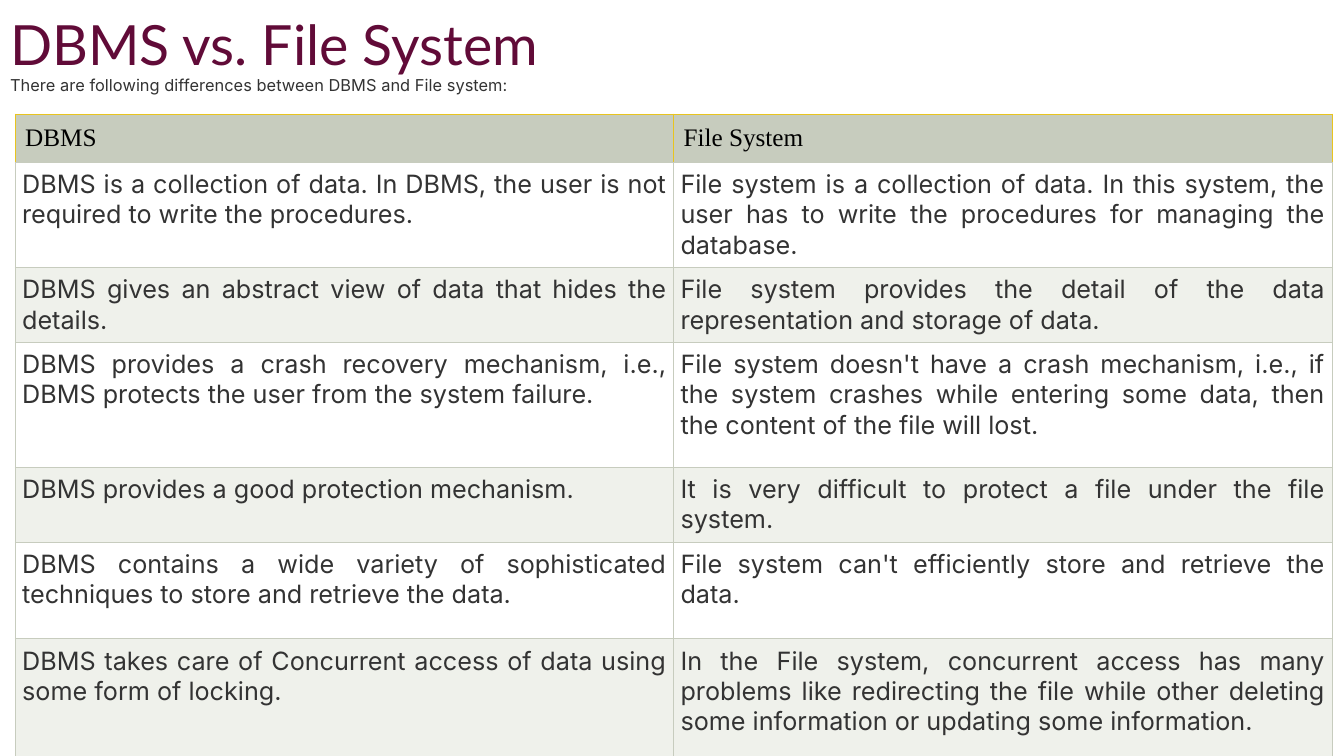
import pptx
import pptx.util
import pptx.dml.color
import pptx.enum.text
from dataclasses import dataclass
from lxml import etree
from pptx.util import Inches

ALIGN = pptx.enum.text.PP_ALIGN


@dataclass(frozen=True)
class Theme:
    plum: str = "610B38"
    ink: str = "333333"
    black: str = "000000"
    white: str = "FFFFFF"
    pale: str = "EFF1EB"
    sage: str = "C7CCBE"
    gold: str = "E8C41F"
    head: str = "Lato"
    body: str = "Inter"
    serif: str = "Times New Roman"
    big: float = 39.6
    small: float = 11.7
    cell: float = 18
    line: float = 0.6


THEME = Theme()

ROWS = [
    (0.47, "DBMS", "File System"),
    (0.96, "DBMS is a collection of data. In DBMS, the user is not required to write the procedures.",
     "File system is a collection of data. In this system, the user has to write the procedures for managing the database."),
    (0.69, "DBMS gives an abstract view of data that hides the details.",
     "File system provides the detail of the data representation and storage of data."),
    (1.24, "DBMS provides a crash recovery mechanism, i.e., DBMS protects the user from the system failure.",
     "File system doesn't have a crash mechanism, i.e., if the system crashes while entering some data, then the content of the file will lost."),
    (0.68, "DBMS provides a good protection mechanism.",
     "It is very difficult to protect a file under the file system."),
    (0.96, "DBMS contains a wide variety of sophisticated techniques to store and retrieve the data.",
     "File system can't efficiently store and retrieve the data."),
    (1.24, "DBMS takes care of Concurrent access of data using some form of locking.",
     "In the File system, concurrent access has many problems like redirecting the file while other deleting some information or updating some information."),
]


def rgb(color):
    return pptx.dml.color.RGBColor.from_string(color)


def style(para, font, size, color, align):
    para.alignment = align
    for run in para.runs:
        run.font.name = font
        run.font.size = pptx.util.Pt(size)
        run.font.color.rgb = rgb(color)
        run.font.bold = False


def add_title(slide):
    title = slide.shapes.title
    title.left, title.top = Inches(0), Inches(0.02)
    title.width, title.height = Inches(13.33), Inches(1.11)
    frame = title.text_frame
    frame.auto_size = pptx.enum.text.MSO_AUTO_SIZE.NONE
    frame.vertical_anchor = pptx.enum.text.MSO_ANCHOR.MIDDLE
    frame.margin_bottom = Inches(0.09)
    frame.text = ("DBMS vs. File System\n"
                  "There are following differences between DBMS and File system:")
    fonts = [(THEME.head, THEME.big, THEME.plum),
             (THEME.body, THEME.small, THEME.ink)]
    for para, (font, size, color) in zip(frame.paragraphs, fonts):
        style(para, font, size, color, ALIGN.LEFT)
        para.line_spacing = 0.9
        para.space_before = pptx.util.Pt(0)


def set_edges(cell, colors):
    props = cell._tc.get_or_add_tcPr()
    tag = pptx.oxml.ns.qn
    for spot, (side, color) in enumerate(zip("LRTB", colors)):
        line = etree.Element(tag(f"a:ln{side}"), w=str(pptx.util.Pt(THEME.line)))
        fill = etree.SubElement(line, tag("a:solidFill"))
        etree.SubElement(fill, tag("a:srgbClr"), val=color)
        props.insert(spot, line)


def fill_cell(cell, text, row):
    header = row == 0
    cell.text = text
    pad = Inches(0.1 if header else 0.07)
    cell.margin_left = cell.margin_right = pad
    cell.margin_top = cell.margin_bottom = pad
    cell.fill.solid()
    if header:
        back, font, ink, align = THEME.sage, THEME.serif, THEME.black, ALIGN.LEFT
        edges = [THEME.gold] * 3 + [THEME.sage]
    else:
        back = THEME.white if row % 2 else THEME.pale
        font, ink, align = THEME.body, THEME.ink, ALIGN.JUSTIFY
        edges = [THEME.sage] * 4
    cell.fill.fore_color.rgb = rgb(back)
    style(cell.text_frame.paragraphs[0], font, THEME.cell, ink, align)
    set_edges(cell, edges)


def add_grid(slide):
    high = sum(row[0] for row in ROWS)
    frame = slide.shapes.add_table(len(ROWS), 2, Inches(0.15), Inches(1.13),
                                   Inches(13.06), Inches(high))
    table = frame.table
    table.horz_banding = False
    for row, (height, *texts) in enumerate(ROWS):
        table.rows[row].height = Inches(height)
        for col, text in enumerate(texts):
            fill_cell(table.cell(row, col), text, row)


def main():
    deck = pptx.Presentation()
    deck.slide_width, deck.slide_height = Inches(13.33), Inches(7.5)
    slide = deck.slides.add_slide(deck.slide_layouts[5])
    add_title(slide)
    add_grid(slide)
    deck.save("out.pptx")


if __name__ == "__main__":
    main()
